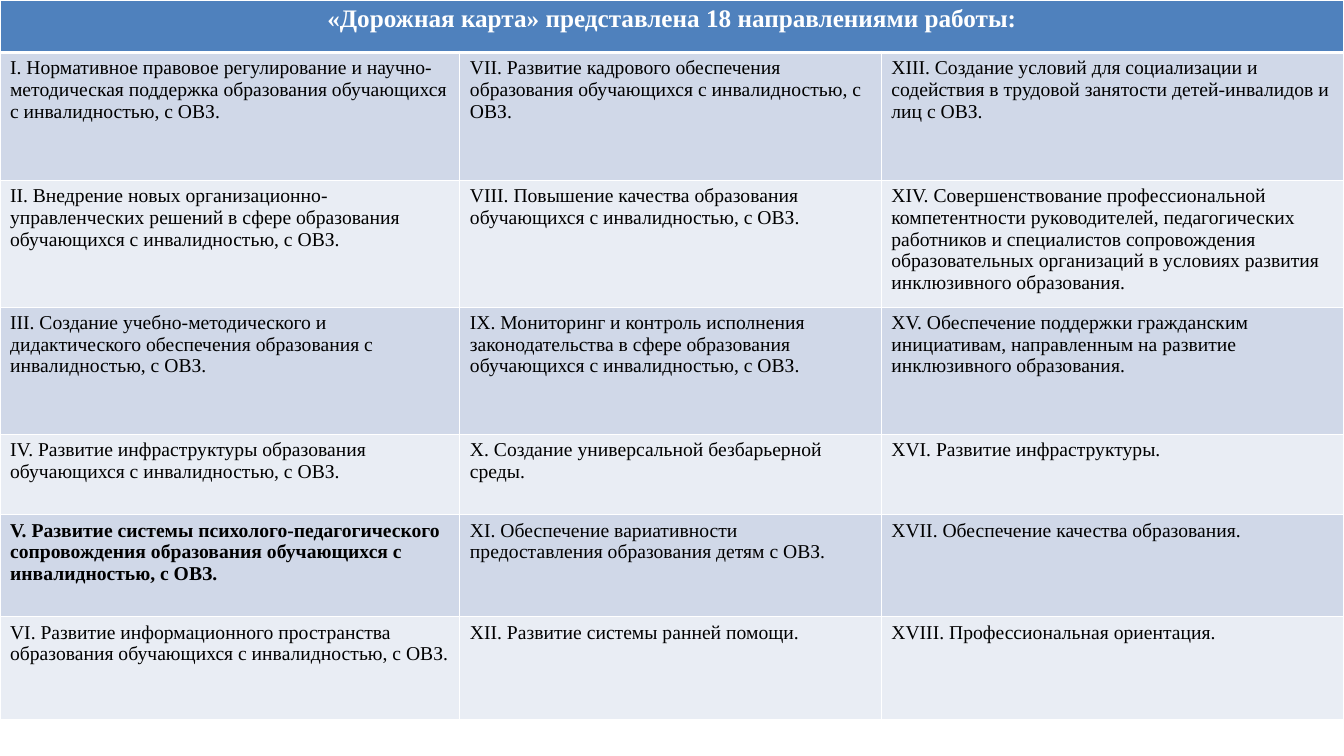
from lxml.etree import SubElement
from pptx import Presentation
from pptx.dml.color import RGBColor
from pptx.enum.text import PP_ALIGN
from pptx.oxml.ns import qn
from pptx.util import Cm, Pt

HEADING = "«Дорожная карта» представлена 18 направлениями работы:"
DIRECTIONS = [
    ("I. Нормативное правовое регулирование и научно-методическая поддержка "
     "образования обучающихся с инвалидностью, с ОВЗ.",
     "VII. Развитие кадрового обеспечения образования обучающихся с инвалидностью, с ОВЗ.",
     "XIII. Создание условий для социализации и содействия в трудовой занятости "
     "детей-инвалидов и лиц с ОВЗ."),
    ("II. Внедрение новых организационно-управленческих решений в сфере образования "
     "обучающихся с инвалидностью, с ОВЗ.",
     "VIII. Повышение качества образования обучающихся с инвалидностью, с ОВЗ.",
     "XIV. Совершенствование профессиональной компетентности руководителей, "
     "педагогических работников и специалистов сопровождения образовательных "
     "организаций в условиях развития инклюзивного образования."),
    ("III. Создание учебно-методического и дидактического обеспечения образования "
     "с инвалидностью, с ОВЗ.",
     "IX. Мониторинг и контроль исполнения законодательства в сфере образования "
     "обучающихся с инвалидностью, с ОВЗ.",
     "XV. Обеспечение поддержки гражданским инициативам, направленным на развитие "
     "инклюзивного образования."),
    ("IV. Развитие инфраструктуры образования обучающихся с инвалидностью, с ОВЗ.",
     "X. Создание универсальной безбарьерной среды.",
     "XVI. Развитие инфраструктуры."),
    ("V. Развитие системы психолого-педагогического сопровождения образования "
     "обучающихся с инвалидностью, с ОВЗ.",
     "XI. Обеспечение вариативности предоставления образования детям с ОВЗ.",
     "XVII. Обеспечение качества образования."),
    ("VI. Развитие информационного пространства образования обучающихся "
     "с инвалидностью, с ОВЗ.",
     "XII. Развитие системы ранней помощи.",
     "XVIII. Профессиональная ориентация."),
]
HIGHLIGHTED = "V. "
COLUMN_WIDTHS = [11.59, 10.62, 11.66]
ROW_HEIGHTS = [1.32, 3.22, 3.2, 3.2, 2.03, 2.57, 2.6]


def color(hex_value):
    return RGBColor.from_string(hex_value)


class RoadmapSlide:
    font = "Times New Roman"
    white, black, header_fill = "FFFFFF", "000000", "4F81BD"
    bands = ("D0D8E8", "E9EDF4")

    def __init__(self, slide):
        self.slide = slide

    def grid(self, widths, heights):
        frame = self.slide.shapes.add_table(
            len(heights), len(widths), 0, 0, Cm(sum(widths)), Cm(sum(heights)))
        for column, width in zip(frame.table.columns, widths):
            column.width = Cm(width)
        for row, height in zip(frame.table.rows, heights):
            row.height = Cm(height)
        return frame.table

    def borders(self, cell, top=1, bottom=1):
        properties = cell._tc.get_or_add_tcPr()
        for side, points in (("L", 1), ("R", 1), ("T", top), ("B", bottom)):
            line = SubElement(properties, qn(f"a:ln{side}"), w=str(Pt(points)))
            fill = SubElement(line, qn("a:solidFill"))
            SubElement(fill, qn("a:srgbClr"), val=self.white)

    def cell(self, cell, text, fill, size=14, ink=black, bold=False, align=PP_ALIGN.LEFT):
        cell.fill.solid()
        cell.fill.fore_color.rgb = color(fill)
        paragraph = cell.text_frame.paragraphs[0]
        paragraph.alignment = align
        run = paragraph.add_run()
        run.text = text
        run.font.name = self.font
        run.font.size = Pt(size)
        run.font.bold = bold
        run.font.color.rgb = color(ink)


def main():
    presentation = Presentation()
    presentation.slide_width, presentation.slide_height = Cm(33.87), Cm(19.05)
    roadmap = RoadmapSlide(presentation.slides.add_slide(presentation.slide_layouts[6]))
    table = roadmap.grid(COLUMN_WIDTHS, ROW_HEIGHTS)

    # Borders come before fills in the cell properties
    for row_index, row in enumerate(table.rows):
        for cell in row.cells:
            roadmap.borders(cell, top=3 if row_index == 1 else 1,
                            bottom=3 if row_index == 0 else 1)

    # Heading across all columns
    heading = table.cell(0, 0)
    heading.merge(table.cell(0, len(COLUMN_WIDTHS) - 1))
    roadmap.cell(heading, HEADING, roadmap.header_fill, size=18, ink=roadmap.white,
                 bold=True, align=PP_ALIGN.CENTER)

    # Eighteen directions in banded rows
    for row_index, directions in enumerate(DIRECTIONS):
        for column_index, direction in enumerate(directions):
            roadmap.cell(table.cell(row_index + 1, column_index), direction,
                         roadmap.bands[row_index % 2],
                         bold=direction.startswith(HIGHLIGHTED))

    presentation.save("out.pptx")


if __name__ == "__main__":
    main()
